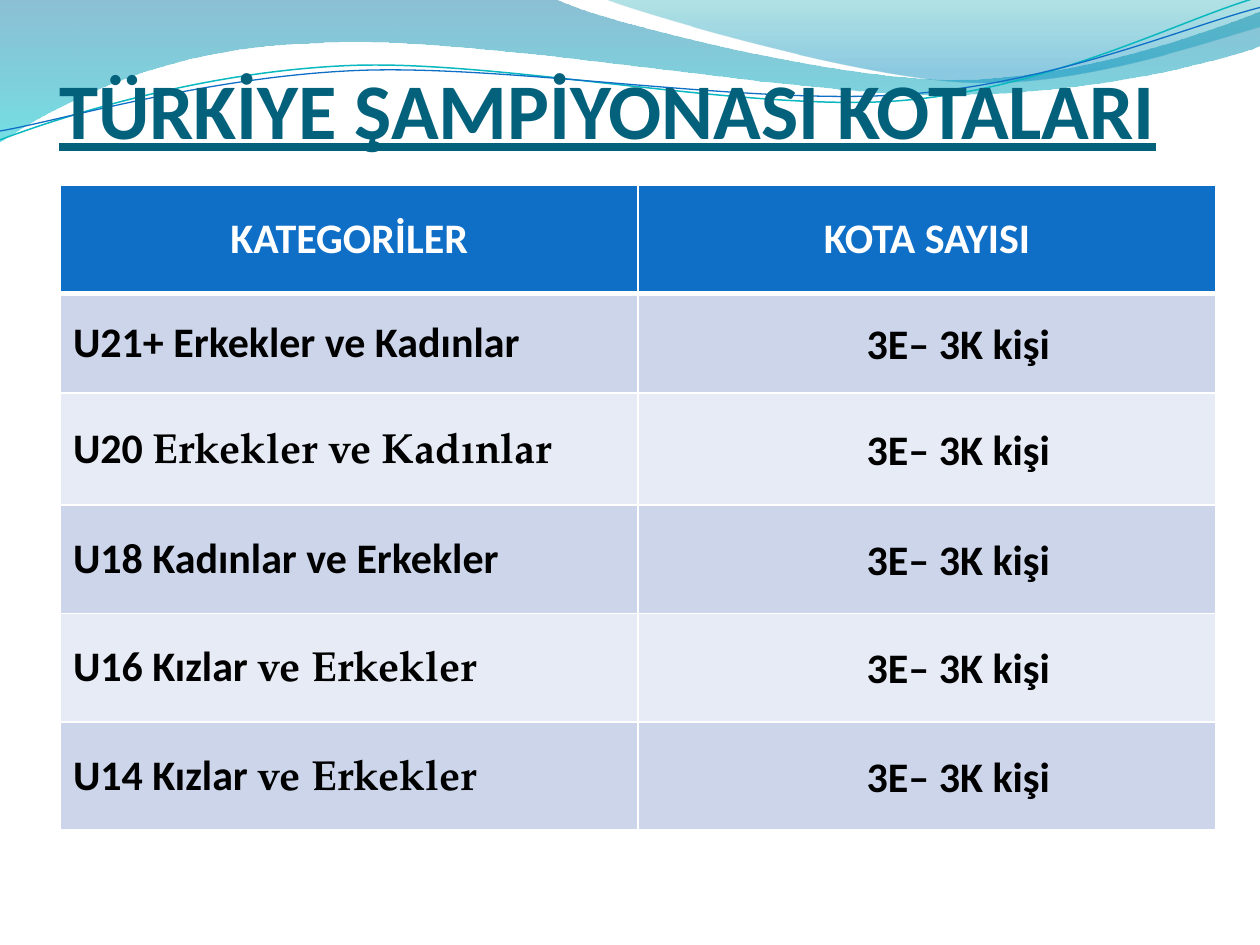
import math
from lxml import etree
from pptx import Presentation, util as u
from pptx.dml.color import RGBColor
from pptx.enum import text
from pptx.oxml.ns import qn

COLORS = {
    "title": "04617B", "header": "0F6FC6", "odd": "CCD5EA", "even": "E7EBF5",
    "white": "FFFFFF", "black": "000000", "wave_line": "0AB8BF",
    "deep": "0074A1", "aqua": "00C6CF", "teal": "00A1A9", "sky": "008BBF",
}
RGB = {name: RGBColor.from_string(value) for name, value in COLORS.items()}
SANS, SERIF = "Calibri", "TeX Gyre Pagella"
TILT = 2.7  # degrees the thin lines are turned counter-clockwise

prs = Presentation()
prs.slide_width, prs.slide_height = u.Inches(10), u.Inches(7.5)
slide = prs.slides.add_slide(prs.slide_layouts[5])


def draw_outline(start, parts, closed):
    """Draw parts of 2 numbers (line to) or 6 numbers (cubic curve to), in inches."""
    points = [start] + [p for part in parts for p in zip(part[::2], part[1::2])]
    emu = [(u.Inches(x), u.Inches(y)) for x, y in points]
    builder = slide.shapes.build_freeform(*emu[0], scale=1.0)
    builder.add_line_segments(emu[1:], close=closed)
    outline = builder.convert_to_shape()
    outline.shadow.inherit = False
    # Join each three points of a curve into one cubic segment
    segments = iter(list(outline.element.iter(qn("a:lnTo"))))
    for part in parts:
        first = next(segments)
        if len(part) == 6:
            first.addprevious(curve := etree.Element(qn("a:cubicBezTo")))
            for segment in (first, next(segments), next(segments)):
                curve.append(segment[0])
                segment.getparent().remove(segment)
    return outline


def style_runs(paragraph, size, color, font=SANS):
    for run in paragraph.runs:
        run.font.size, run.font.bold, run.font.name = u.Pt(size), True, font
        run.font.color.rgb = RGB[color]


# Filled waves: start, parts, gradient stops (position, colour, opacity %)
waves = [
    ((0, 0), [(4.4, -0.01), (4.76, 0.17, 6.64, 0.63, 7.58, 0.63),
              (8.53, 0.63, 9.58, 0.26, 10, 0.09), (10.01, 0.36),
              (9.83, 0.44, 8.7, 0.76, 7.46, 0.75), (6.22, 0.75, 3.82, 0.28, 2.57, 0.34),
              (1.29, 0.36, 0.46, 0.83, -0.01, 1.13), (0, 0)],
     [(0, "deep", 45), (1, "aqua", 55)]),
    ((4.79, -0.01), [(5.09, 0.11, 6.82, 0.62, 7.69, 0.65),
                     (8.56, 0.69, 9.61, 0.32, 10, 0.21), (10, 0), (4.79, -0.01)],
     [(0, "teal", 30), (0.8, "sky", 45)]),
]
for start, parts, stops in waves:
    wave = draw_outline(start, parts, True)
    wave.line.fill.background()
    wave.fill.gradient()
    wave.fill.gradient_angle = 270
    for stop, (position, color, _) in zip(wave.fill.gradient_stops, stops):
        stop.position, stop.color.rgb = position, RGB[color]
    for tint, (_, _, opacity) in zip(wave.element.spPr.iter(qn("a:srgbClr")), stops):
        etree.SubElement(tint, qn("a:alpha"), val=str(opacity * 1000))

# Thin wave lines: laid out level about their middle, then tilted as a whole
wave_lines = [
    ((0, 1.11), [(0.48, 0.93, 1.58, 0.57, 2.77, 0.52), (3.95, 0.47, 5.93, 0.89, 7.13, 0.8),
                 (8.33, 0.71, 9.38, 0.15, 9.98, -0.02)], (4.99, 0.57), "wave_line", 0.85),
    ((0, 1.04), [(0.47, 0.96, 1.64, 0.61, 2.83, 0.56), (4.03, 0.51, 5.97, 0.84, 7.17, 0.75),
                 (8.36, 0.67, 9.41, 0.21, 10, 0.06)], (5, 0.59), "header", 0.75),
]
cos, sin = math.cos(math.radians(TILT)), math.sin(math.radians(TILT))
for start, parts, (mid_x, mid_y), color, width in wave_lines:
    level = [[n for x, y in zip(part[::2], part[1::2])
              for n in (mid_x + (x - mid_x) * cos - (y - mid_y) * sin,
                        mid_y + (x - mid_x) * sin + (y - mid_y) * cos)]
             for part in (start, *parts)]
    wave_line = draw_outline(level[0], level[1:], False)
    wave_line.rotation = -TILT
    wave_line.fill.background()
    wave_line.line.color.rgb, wave_line.line.width = RGB[color], u.Pt(width)

# Title, in front of the waves
title = slide.shapes.title
title.element.getparent().append(title.element)
title.left, title.top, title.width, title.height = map(u.Inches, (0.47, 0.6, 9, 0.63))
heading = title.text_frame
heading.text = "TÜRKİYE ŞAMPİYONASI KOTALARI"
heading.auto_size = text.MSO_AUTO_SIZE.NONE
heading.vertical_anchor = text.MSO_ANCHOR.BOTTOM
heading.margin_left = heading.margin_right = heading.margin_bottom = 0
heading.margin_top = u.Inches(0.05)
heading.paragraphs[0].alignment = text.PP_ALIGN.LEFT
style_runs(heading.paragraphs[0], 45, "title")
heading.paragraphs[0].runs[0].font.underline = True

# Quota table: sans part and serif part of each category
categories = [("U21+ Erkekler ve Kadınlar", ""), ("U20 ", "Erkekler ve Kadınlar"),
              ("U18 Kadınlar ve Erkekler", ""), ("U16 Kızlar ", "ve Erkekler"),
              ("U14 Kızlar ", "ve Erkekler")]
rows = [("KATEGORİLER", "", "KOTA SAYISI")] + [(*c, "3E– 3K kişi") for c in categories]
row_heights = [0.86, 0.79, 0.89, 0.86, 0.86, 0.86]
quotas = slide.shapes.add_table(len(rows), 2, u.Inches(0.48), u.Inches(1.47),
                                u.Inches(9.17), u.Inches(sum(row_heights))).table
for column in quotas.columns:
    column.width = u.Inches(9.17 / 2)

for r, (category, serif_part, quota) in enumerate(rows):
    quotas.rows[r].height = u.Inches(row_heights[r])
    ink = "black" if r else "white"
    for c, words in enumerate((category, quota)):
        cell = quotas.cell(r, c)
        cell.vertical_anchor = text.MSO_ANCHOR.MIDDLE
        paragraph = cell.text_frame.paragraphs[0]
        paragraph.text = words
        if c == 0 and serif_part:
            paragraph.add_run().text = serif_part
        style_runs(paragraph, 24, ink)
        if c == 0 and serif_part:
            paragraph.runs[1].font.name = SERIF
        if r == 0 or c == 1:
            paragraph.alignment = text.PP_ALIGN.CENTER
        if r and c:
            paragraph.line_spacing = 1.07
            properties = paragraph._p.get_or_add_pPr()
            properties.set("marL", str(u.Inches(0.5)))
            properties.set("indent", "0")

        # White borders, thicker under the header; they precede the fill in the XML
        borders = cell._tc.get_or_add_tcPr()
        for side in ("lnL", "lnR", "lnT", "lnB"):
            thick = (r, side) in ((0, "lnB"), (1, "lnT"))
            border = etree.SubElement(borders, qn(f"a:{side}"), w=str(u.Pt(3 if thick else 1)))
            paint = etree.SubElement(border, qn("a:solidFill"))
            etree.SubElement(paint, qn("a:srgbClr"), val=COLORS["white"])
        cell.fill.solid()
        cell.fill.fore_color.rgb = RGB["header" if r == 0 else "odd" if r % 2 else "even"]

prs.save("out.pptx")
